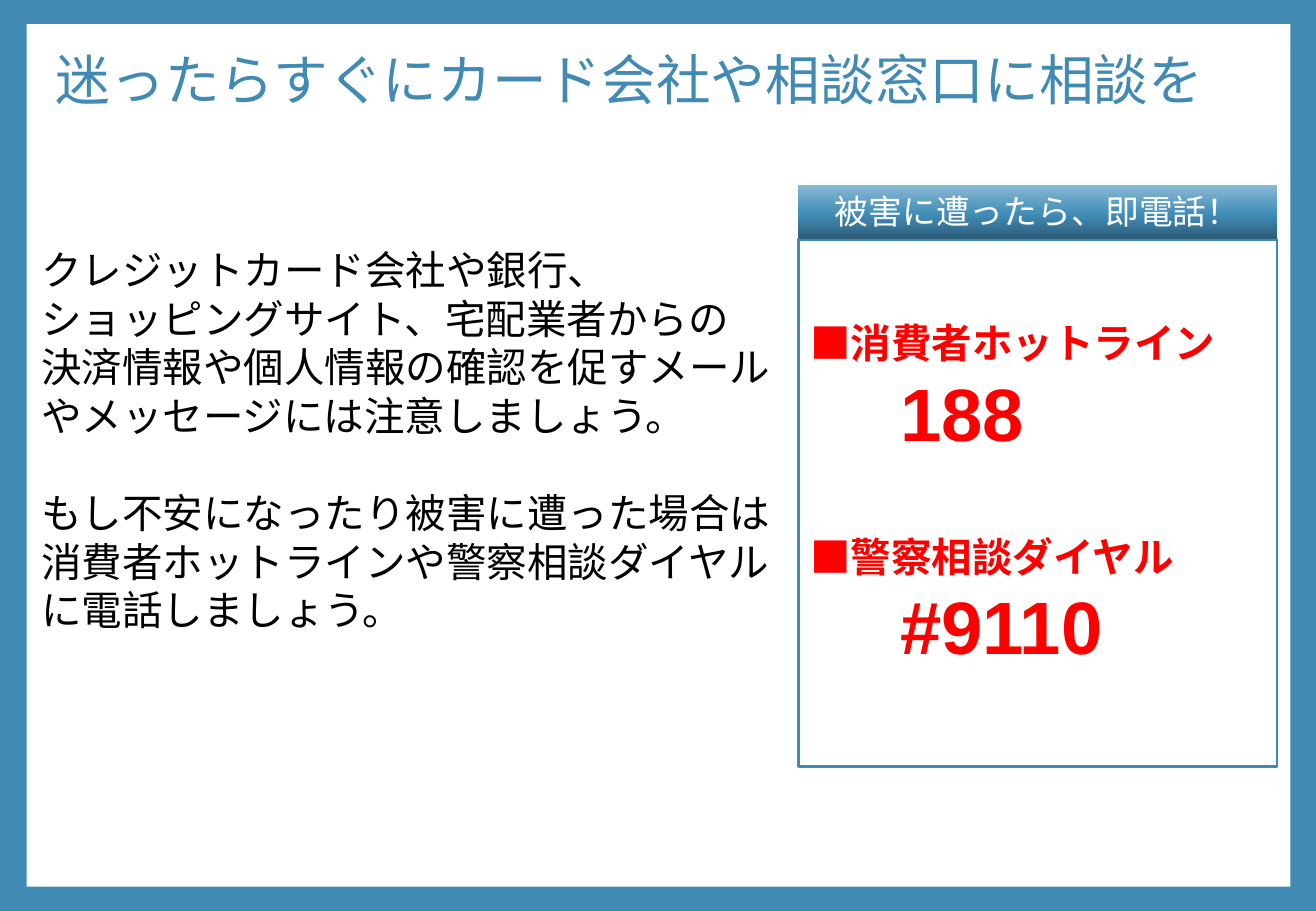
"""Build the slide that urges readers to contact a card company or a helpline."""
from copy import deepcopy

from pptx import Presentation
from pptx.dml.color import RGBColor
from pptx.enum import shapes, text
from pptx.oxml.ns import qn
from pptx.util import Inches, Pt

COLORS = {"blue": "418AB3", "white": "FFFFFF", "black": "000000", "red": "FF0000"}
GRADIENT = [(0, "2C5C78"), (0.48, "438FB9"), (1, "8ABAD4")]

TITLE = "迷ったらすぐにカード会社や相談窓口に相談を"
ADVICE = [
    ("クレジットカード会社や銀⾏、", 0),
    ("ショッピングサイト、宅配業者からの", 0),
    ("決済情報や個⼈情報の確認を促すメールやメッセージには注意しましょう。", 0),
    ("もし不安になったり被害に遭った場合は 消費者ホットラインや警察相談ダイヤルに電話しましょう。", 28.8),
]
HEADER = "被害に遭ったら、即電話！"
HOTLINES = [("■消費者ホットライン", "188"), ("■警察相談ダイヤル", "#9110")]

PANEL_LEFT, PANEL_TOP, PANEL_WIDTH = 6.57, 1.97, 3.94
HEADER_HEIGHT = 0.45
NUMBER_INDENT = 0.74


def rgb(name):
    return RGBColor.from_string(COLORS[name])


def add_box(s, left, top, width, height):
    sp = s.shapes.add_shape(shapes.MSO_SHAPE.RECTANGLE, Inches(left), Inches(top),
                            Inches(width), Inches(height))
    sp.shadow.inherit = False
    sp.fill.solid()
    sp.fill.fore_color.rgb = rgb("white")
    sp.line.fill.background()
    sp.text_frame.word_wrap = True
    sp.text_frame.vertical_anchor = text.MSO_ANCHOR.TOP
    return sp


def write(tf, lines, font, color, bold=False, align=text.PP_ALIGN.LEFT):
    """Fill a text frame with (text, size, space before, indent) lines."""
    for i, (line, size, before, indent) in enumerate(lines):
        p = tf.paragraphs[0] if i == 0 else tf.add_paragraph()
        p.text = line
        p.alignment = align
        if before:
            p.space_before = Pt(before)
        if indent:
            p._p.get_or_add_pPr().set("marL", str(Inches(indent)))
        p.font.name, p.font.size, p.font.bold = font, Pt(size), bold
        p.font.color.rgb = rgb(color)


def main():
    prs = Presentation()
    prs.slide_width, prs.slide_height = Inches(10.83), Inches(7.5)
    s = prs.slides.add_slide(prs.slide_layouts[5])
    s.background.fill.solid()
    s.background.fill.fore_color.rgb = rgb("blue")

    page = add_box(s, 0.22, 0.2, 10.4, 7.1)
    s.shapes._spTree.insert(2, page._element)

    title = s.shapes.title
    title.left, title.top = Inches(0.36), Inches(0.32)
    title.width, title.height = Inches(10.25), Inches(0.72)
    tf = title.text_frame
    tf.auto_size = text.MSO_AUTO_SIZE.NONE
    tf.vertical_anchor = text.MSO_ANCHOR.MIDDLE
    write(tf, [(TITLE, 32.4, 0, 0)], "Calibri", "blue")
    tf.paragraphs[0].line_spacing = 0.9

    advice = s.shapes.add_textbox(Inches(0.24), Inches(PANEL_TOP), Inches(6.42), Inches(3.33))
    advice.text_frame.word_wrap = True
    write(advice.text_frame, [(line, 24, gap, 0) for line, gap in ADVICE], "Arial", "black")

    panel = add_box(s, PANEL_LEFT, PANEL_TOP, PANEL_WIDTH, 4.34)
    panel.line.color.rgb = rgb("blue")
    panel.line.width = Pt(1.5)
    panel.text_frame.margin_top = Inches(0.65)
    lines = []
    for i, (name, number) in enumerate(HOTLINES):
        lines += [(name, 24, 45 if i else 0, 0), (number, 44, 0, NUMBER_INDENT)]
    write(panel.text_frame, lines, "Arial", "red", bold=True)

    header = add_box(s, PANEL_LEFT, PANEL_TOP - HEADER_HEIGHT, PANEL_WIDTH, HEADER_HEIGHT)
    header.fill.gradient()
    header.fill.gradient_angle = 90
    stops = header._element.spPr.find(".//" + qn("a:gsLst"))
    stops.append(deepcopy(stops[0]))
    for stop, (position, color) in zip(header.fill.gradient_stops, GRADIENT):
        stop.position = position
        stop.color.rgb = RGBColor.from_string(color)
    write(header.text_frame, [(HEADER, 20, 0, 0)], "Calibri", "white",
          align=text.PP_ALIGN.CENTER)

    prs.save("out.pptx")


if __name__ == "__main__":
    main()
